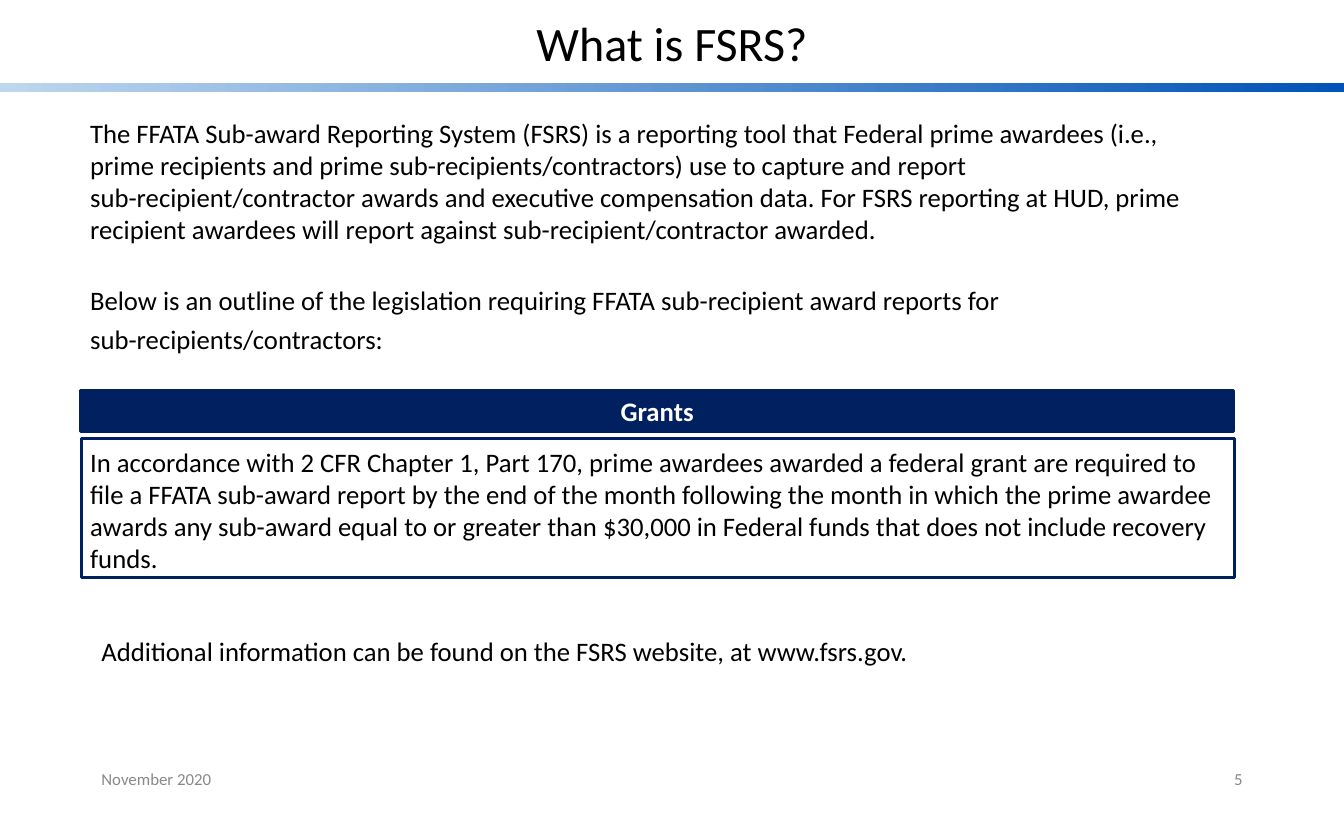
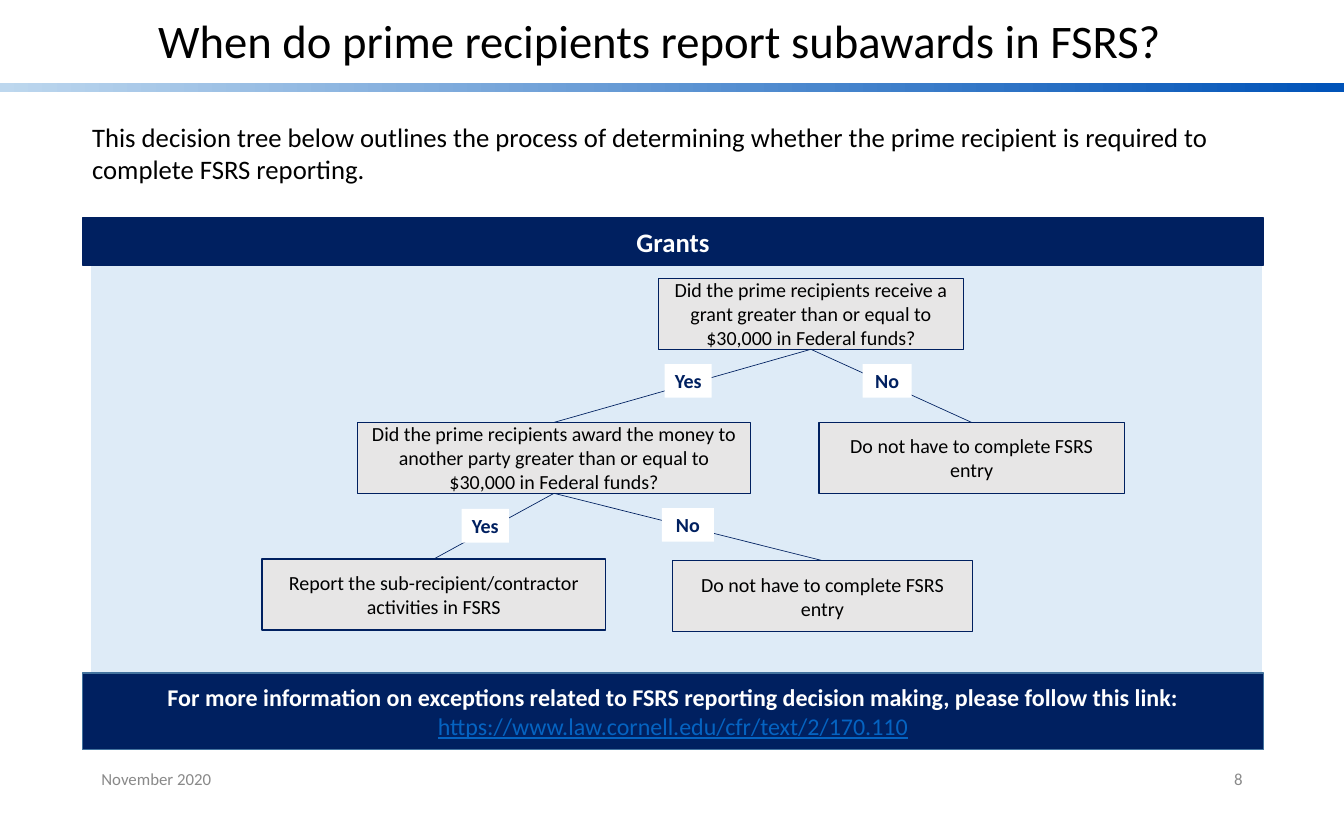
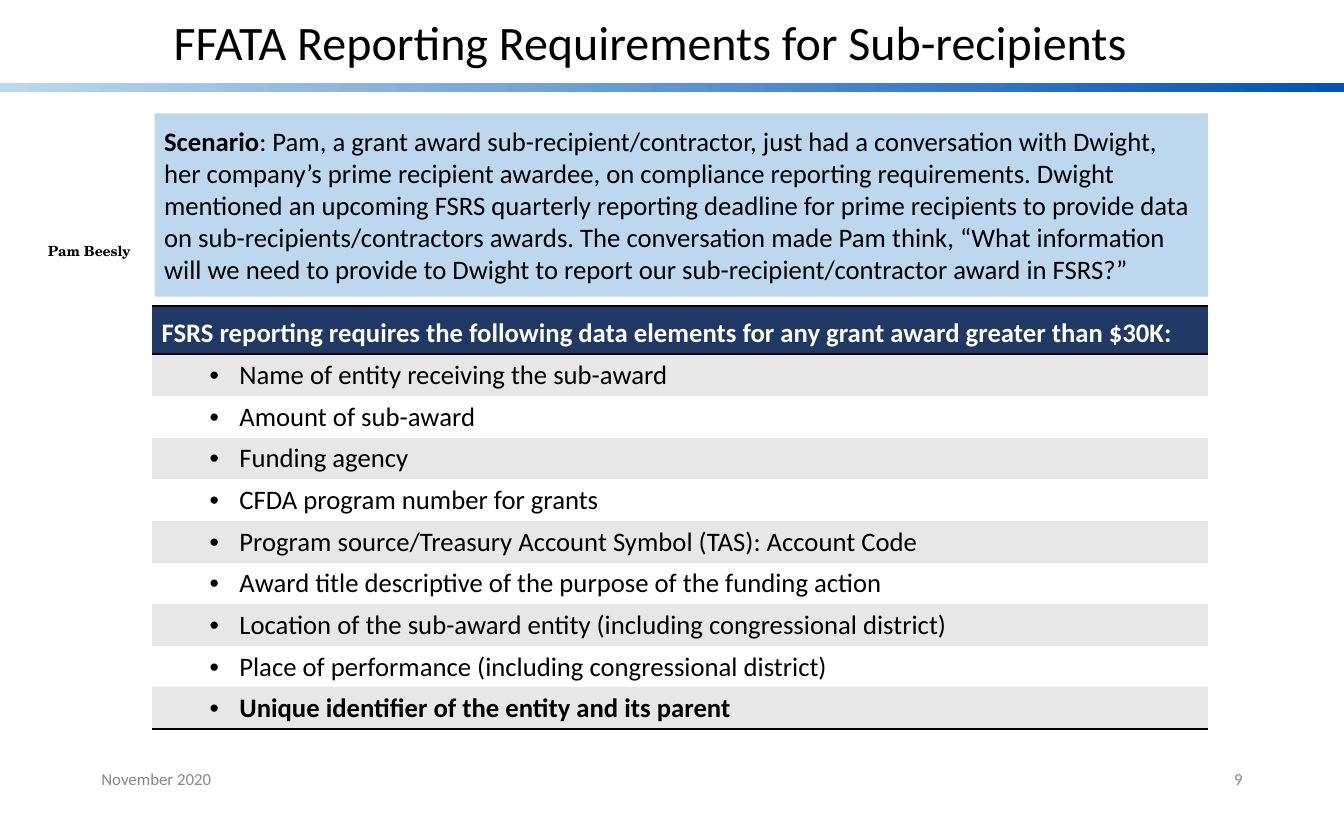
from lxml.etree import SubElement
from pptx import Presentation
from pptx.dml.color import RGBColor
from pptx.enum.shapes import MSO_CONNECTOR, MSO_SHAPE
from pptx.enum.text import MSO_ANCHOR, PP_ALIGN
from pptx.oxml import parse_xml
from pptx.oxml.ns import nsdecls, qn
from pptx.util import Pt

BLACK = RGBColor(0x00, 0x00, 0x00)
WHITE = RGBColor(0xFF, 0xFF, 0xFF)
NAVY = RGBColor(0x00, 0x20, 0x60)
TABLE_NAVY = RGBColor(0x20, 0x38, 0x64)
BAND_BLUE = RGBColor(0x00, 0x53, 0xB8)
LIGHT_BLUE = RGBColor(0xBD, 0xD7, 0xEE)
PALE_BLUE = RGBColor(0xDE, 0xEB, 0xF7)
EDGE_BLUE = RGBColor(0x43, 0x73, 0x9E)
LINK_BLUE = RGBColor(0x05, 0x63, 0xC1)
BOX_GRAY = RGBColor(0xE7, 0xE6, 0xE6)
ROW_GRAY = RGBColor(0xE7, 0xE7, 0xE7)
FOOTER_GRAY = RGBColor(0x89, 0x89, 0x89)

LEFT, CENTER, RIGHT = PP_ALIGN.LEFT, PP_ALIGN.CENTER, PP_ALIGN.RIGHT
TOP, MIDDLE = MSO_ANCHOR.TOP, MSO_ANCHOR.MIDDLE
NO_STYLE = "{2D5ABB26-0587-4C30-8999-92F81FD0307C}"


def add_box(page, place, text="", size=20, color=BLACK, bold=False, align=LEFT,
            anchor=TOP, fill=None, line=None, line_width=1, font="Calibri"):
    """Add a text box, or a rectangle when there is a fill or an outline."""
    lengths = [Pt(value) for value in place]
    if fill is None and line is None:
        box = page.shapes.add_textbox(*lengths)
    else:
        box = page.shapes.add_shape(MSO_SHAPE.RECTANGLE, *lengths)
        box.shadow.inherit = False
    if fill is None:
        box.fill.background()
    else:
        box.fill.solid()
        box.fill.fore_color.rgb = fill
    if line is None:
        box.line.fill.background()
    else:
        box.line.color.rgb = line
        box.line.width = Pt(line_width)
    frame = box.text_frame
    frame.word_wrap = True
    frame.vertical_anchor = anchor
    frame.text = text
    for para in frame.paragraphs:
        para.alignment = align
        for span in para.runs:
            format_span(span, size, color, bold, font)
    return box


def format_span(span, size, color, bold=False, font="Calibri"):
    span.font.name = font
    span.font.size = Pt(size)
    span.font.color.rgb = color
    span.font.bold = bold


deck = Presentation()
deck.slide_width, deck.slide_height = Pt(1008), Pt(612)

# Shared parts: gradient band, title, footer date and page number
titles = [
    ("What is FSRS?", "5", 36, (97, 12, 814, 45)),
    ("When do prime recipients report subawards in FSRS?", "8", 35, (51, 12, 888, 40.5)),
    ("FFATA Reporting Requirements for Sub-recipients", "9", 36, (69, 13.5, 837.5, 41)),
]
pages = []
for title, number, size, place in titles:
    page = deck.slides.add_slide(deck.slide_layouts[6])
    band = add_box(page, (0, 62.3, 1008, 6.6), fill=BAND_BLUE)
    band.fill.gradient()
    band.fill.gradient_angle = 0
    for stop, color in zip(band.fill.gradient_stops, (LIGHT_BLUE, BAND_BLUE)):
        stop.color.rgb = color
    heading = add_box(page, place, title, size, align=CENTER, anchor=MIDDLE)
    heading.text_frame.paragraphs[0].line_spacing = 0.9
    add_box(page, (69, 567.5, 227, 32.5), "November 2020", 12.6, FOOTER_GRAY, anchor=MIDDLE)
    add_box(page, (712, 567.5, 227, 32.5), number, 12.6, FOOTER_GRAY,
            align=RIGHT, anchor=MIDDLE)
    pages.append(page)
about_page, tree_page, data_page = pages

# Slide 1: what FSRS is
intro = add_box(
    about_page, (60.5, 84.2, 865.5, 184.3),
    "The FFATA Sub-award Reporting System (FSRS) is a reporting tool that Federal prime "
    "awardees (i.e., prime recipients and prime sub-recipients/contractors) use to capture "
    "and report sub-recipient/contractor awards and executive compensation data. For FSRS "
    "reporting at HUD, prime recipient awardees will report against "
    "sub-recipient/contractor awarded.\n"
    "Below is an outline of the legislation requiring FFATA sub-recipient award reports "
    "for sub-recipients/contractors:")
outline = intro.text_frame.paragraphs[1]
outline.space_before = Pt(24.4)
outline.line_spacing = 1.2
add_box(about_page, (60.5, 293, 864.7, 31), "Grants", color=WHITE, bold=True,
        align=CENTER, anchor=MIDDLE, fill=NAVY, line=NAVY, line_width=2.25)
add_box(about_page, (60.5, 330.5, 864.7, 104.4),
        "In accordance with 2 CFR Chapter 1, Part 170, prime awardees awarded a federal "
        "grant are required to file a FFATA sub-award report by the end of the month "
        "following the month in which the prime awardee awards any sub-award equal to or "
        "greater than $30,000 in Federal funds that does not include recovery funds.")
add_box(about_page, (61.2, 329, 864.7, 104.4), line=NAVY, line_width=2.25)
add_box(about_page, (69, 472.3, 856, 31.7),
        "Additional information can be found on the FSRS website, at www.fsrs.gov.")

# Slide 2: panel with heading and link bar
add_box(tree_page, (69, 198.7, 877, 306), fill=PALE_BLUE, line=PALE_BLUE)
add_box(tree_page, (62, 87.1, 898.5, 55.4),
        "This decision tree below outlines the process of determining whether the prime "
        "recipient is required to complete FSRS reporting.")
add_box(tree_page, (62, 163.5, 885.6, 35.2), "Grants", color=WHITE, bold=True,
        align=CENTER, anchor=MIDDLE, fill=NAVY, line=NAVY)
link_bar = add_box(
    tree_page, (62, 504.8, 885.6, 57.6),
    "For more information on exceptions related to FSRS reporting decision making, "
    "please follow this link:\vhttps://www.law.cornell.edu/cfr/text/2/170.110",
    18, WHITE, True, CENTER, MIDDLE, NAVY, EDGE_BLUE)
link = link_bar.text_frame.paragraphs[0].runs[1]
format_span(link, 18, LINK_BLUE)
link.font.underline = True

# Slide 2: decision boxes
no_entry = "Do not have to complete FSRS entry"
decisions = {
    "receive": ((493.7, 208.8, 229, 53.2), "Did the prime recipients receive a grant "
                "greater than or equal to $30,000 in Federal funds?"),
    "award": ((268.3, 316.8, 294.5, 53.2), "Did the prime recipients award the money to "
              "another party greater than or equal to $30,000 in Federal funds?"),
    "not received": ((614.2, 316.8, 229, 53.2), no_entry),
    "report": ((196.5, 419.3, 257.7, 53.2), "Report the sub-recipient/contractor "
               "activities in FSRS"),
    "not awarded": ((504.2, 420.5, 225.4, 53.2), no_entry),
}
boxes = {
    name: add_box(tree_page, place, text, 15, align=CENTER, anchor=MIDDLE,
                  fill=BOX_GRAY, line=NAVY)
    for name, (place, text) in decisions.items()
}

# Slide 2: branches with their answers
branches = [
    ("receive", "award", "Yes", (498.5, 273, 35.3, 25.2)),
    ("receive", "not received", "No", (647, 273, 36.7, 25.2)),
    ("award", "report", "Yes", (346.3, 381.7, 35.3, 25.2)),
    ("award", "not awarded", "No", (496.5, 381, 38.9, 25.2)),
]
for parent, child, answer, place in branches:
    branch = tree_page.shapes.add_connector(MSO_CONNECTOR.STRAIGHT, 0, 0, 0, 0)
    branch.begin_connect(boxes[parent], 2)
    branch.end_connect(boxes[child], 0)
    branch.line.color.rgb = NAVY
    branch.line.width = Pt(0.5)
    SubElement(branch._element.spPr, qn("a:effectLst"))
    label = add_box(tree_page, place, answer, 15, NAVY, True, CENTER, fill=WHITE)
    label.text_frame.word_wrap = False

# Slide 3: scenario
scenario = add_box(data_page, (116, 85, 790, 137.5), "Scenario", bold=True,
                   anchor=MIDDLE, fill=LIGHT_BLUE)
story = scenario.text_frame.paragraphs[0].add_run()
story.text = (
    ": Pam, a grant award sub-recipient/contractor, just had a conversation with Dwight, "
    "her company’s prime recipient awardee, on compliance reporting requirements. Dwight "
    "mentioned an upcoming FSRS quarterly reporting deadline for prime recipients to provide "
    "data on sub-recipients/contractors awards. The conversation made Pam think, “What "
    "information will we need to provide to Dwight to report our sub-recipient/contractor "
    "award in FSRS?”")
format_span(story, 20, BLACK)
add_box(data_page, (13, 178.6, 108, 20.2), "Pam Beesly", 10.5, bold=True,
        align=CENTER, font="TeX Gyre Schola")

# Slide 3: data elements
elements = [
    "FSRS reporting requires the following data elements for any grant award "
    "greater than $30K:",
    "Name of entity receiving the sub-award",
    "Amount of sub-award",
    "Funding agency",
    "CFDA program number for grants",
    "Program source/Treasury Account Symbol (TAS): Account Code",
    "Award title descriptive of the purpose of the funding action",
    "Location of the sub-award entity (including congressional district)",
    "Place of performance (including congressional district)",
    "Unique identifier of the entity and its parent",
]
last = len(elements) - 1
table = data_page.shapes.add_table(
    len(elements), 1, Pt(114), Pt(229.7), Pt(792), Pt(36 + 31.2 * last)).table
table._tbl.tblPr.find(qn("a:tableStyleId")).text = NO_STYLE
for index, element in enumerate(elements):
    is_header = index == 0
    table.rows[index].height = Pt(36 if is_header else 31.2)
    cell = table.cell(index, 0)
    cell.text_frame.text = element
    para = cell.text_frame.paragraphs[0]
    if is_header:
        para.line_spacing = 1.2
    else:
        para.level = 1
        properties = para._p.get_or_add_pPr()
        properties.set("marL", str(Pt(58.3)))
        properties.set("indent", str(Pt(-22.3)))
        SubElement(properties, qn("a:buFont")).set("typeface", "Arial")
        SubElement(properties, qn("a:buChar")).set("char", "•")
    format_span(para.runs[0], 20, WHITE if is_header else BLACK, index in (0, last))
    cell.fill.solid()
    cell.fill.fore_color.rgb = TABLE_NAVY if is_header else (WHITE, ROW_GRAY)[index % 2]
    edges = {0: ("lnB", "lnT"), last: ("lnB",)}.get(index, ())
    for edge in edges:
        cell._tc.get_or_add_tcPr().insert(0, parse_xml(
            f'<a:{edge} {nsdecls("a")} w="{Pt(2)}"><a:solidFill>'
            f'<a:srgbClr val="{BLACK}"/></a:solidFill></a:{edge}>'))

deck.save("out.pptx")
